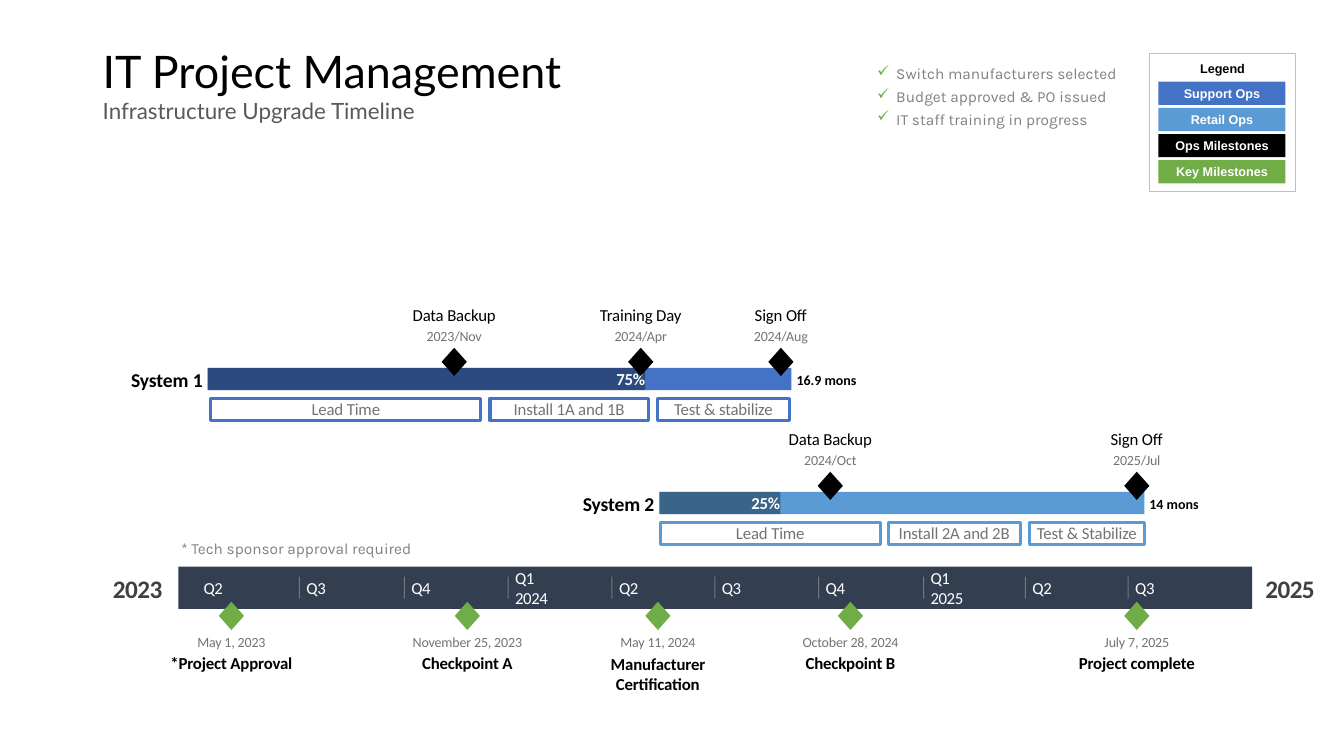
import dataclasses
import itertools
import typing

import pptx
import pptx.dml.color
import pptx.enum.shapes
import pptx.enum.text
import pptx.oxml
import pptx.oxml.ns
import pptx.util

PX = 9144
SHAPE = pptx.enum.shapes.MSO_SHAPE
ALIGN = pptx.enum.text.PP_ALIGN
ANCHOR = pptx.enum.text.MSO_ANCHOR
Box = tuple[float, float, float, float]
COLORS = {
    "white": "FFFFFF", "black": "000000", "support": "4472C4", "retail": "5B9BD5",
    "key": "70AD47", "band": "333F50", "year": "404040", "muted": "737373",
    "note": "808080", "subtitle": "595959", "border": "BFBFBF",
}
DAY_WIDTH = 1.1245
TIMELINE_START = 195
QUARTER_DAYS = [91, 92, 92, 91, 91, 92, 92, 90, 91]


@dataclasses.dataclass(frozen=True)
class Style:
    size: float
    color: str
    name: str = "Calibri"
    bold: bool = False
    align: ALIGN = ALIGN.CENTER
    anchor: ANCHOR = ANCHOR.MIDDLE
    spacing: int = 0
    wrap: bool = False
    inset: tuple[int, int] = (0, 0)
    after: int = 0
    bullet: str = ""


@dataclasses.dataclass(frozen=True)
class Milestone:
    left: int
    title: str
    title_width: int
    date: str
    date_width: int
    title_height: int = 20


@dataclasses.dataclass(frozen=True)
class Stage:
    left: int
    width: int
    title: str


@dataclasses.dataclass(frozen=True)
class System:
    title: str
    left: int
    top: int
    width: int
    color: str
    done: float
    duration: str
    stages: list[Stage]
    milestones: list[Milestone]


YEAR = Style(18, "year", bold=True, spacing=-40)
QUARTER = Style(12, "white", align=ALIGN.LEFT, spacing=-30, wrap=True)
PERCENT = Style(12, "white", bold=True, spacing=-20)
SYSTEM = Style(14, "black", bold=True, align=ALIGN.RIGHT, spacing=-10)
DURATION = Style(10, "black", bold=True, align=ALIGN.LEFT, wrap=True)
STAGE = Style(12, "muted", spacing=-10)
OPS = Style(12, "black", spacing=-10)
KEY = Style(12, "black", bold=True, spacing=-10, wrap=True)
DATE = Style(10, "muted", spacing=-10)
TITLE = Style(32, "black", "Lato", align=ALIGN.LEFT, anchor=ANCHOR.TOP, wrap=True, inset=(10, 5))
SUBTITLE = dataclasses.replace(TITLE, size=16, color="subtitle")
NOTE = dataclasses.replace(TITLE, size=11, color="note", name="Karla", after=3)
CHECK = dataclasses.replace(NOTE, bullet="✓")
LEGEND = Style(9, "white", "Arial", bold=True, inset=(10, 5))
LEGEND_TITLE = dataclasses.replace(LEGEND, color="black", anchor=ANCHOR.TOP)

SYSTEMS = [
    System("System 1", 206, 365, 579, "support", 0.75, "16.9 mons",
           [Stage(209, 268, "Lead Time"), Stage(486, 157, "Install 1A and 1B"),
            Stage(652, 131, "Test & stabilize")],
           [Milestone(438, "Data Backup", 85, "2023/Nov", 56),
            Milestone(623, "Training Day", 83, "2024/Apr", 54),
            Milestone(762, "Sign Off", 53, "2024/Aug", 56)]),
    System("System 2", 654, 488, 481, "retail", 0.25, "14 mons",
           [Stage(655, 218, "Lead Time"), Stage(881, 131, "Install 2A and 2B"),
            Stage(1021, 114, "Test & Stabilize")],
           [Milestone(811, "Data Backup", 85, "2024/Oct", 56),
            Milestone(1115, "Sign Off", 54, "2025/Jul", 49)]),
]
KEY_MILESTONES = [
    Milestone(217, "*Project Approval", 124, "May 1, 2023", 71),
    Milestone(451, "Checkpoint A", 92, "November 25, 2023", 112),
    Milestone(640, "Manufacturer Certification", 100, "May 11, 2024", 78, 41),
    Milestone(831, "Checkpoint B", 92, "October 28, 2024", 99),
    Milestone(1115, "Project complete", 118, "July 7, 2025", 67),
]
LEGEND_ROWS = [("Support Ops", "support"), ("Retail Ops", "retail"),
               ("Ops Milestones", "black"), ("Key Milestones", "key")]


def rgb(color: str) -> pptx.dml.color.RGBColor:
    return pptx.dml.color.RGBColor.from_string(COLORS[color])


def emu(values: typing.Iterable[float]) -> list[int]:
    return [round(value * PX) for value in values]


def set_all(target: typing.Any, values: dict[str, typing.Any]) -> None:
    for name, value in values.items():
        setattr(target, name, value)


def add_xml(parent: typing.Any, tag: str, **values: str) -> typing.Any:
    child = parent.makeelement(pptx.oxml.ns.qn(tag), values)
    parent.append(child)
    return child


def set_alpha(fill: typing.Any, percent: int) -> None:
    color = fill.find(".//" + pptx.oxml.ns.qn("a:srgbClr"))
    add_xml(color, "a:alpha", val=str(percent * 1000))


def write(shape: typing.Any, lines: list[tuple[str, Style]]) -> None:
    frame, first = shape.text_frame, lines[0][1]
    side, end = emu(first.inset)
    set_all(frame, {"margin_left": side, "margin_right": side, "margin_top": end,
                    "margin_bottom": end, "word_wrap": first.wrap,
                    "vertical_anchor": first.anchor})
    for index, (words, style) in enumerate(lines):
        para = frame.add_paragraph() if index else frame.paragraphs[0]
        para.text = words
        set_all(para, {"alignment": style.align, "space_after": pptx.util.Pt(style.after)})
        for span in para.runs:
            set_all(span.font, {"size": pptx.util.Pt(style.size), "name": style.name,
                                "bold": style.bold})
            span.font.color.rgb = rgb(style.color)
            if style.spacing:
                span.font._element.set("spc", str(style.spacing))
        if style.bullet:
            layout = para._p.get_or_add_pPr()
            layout.set("marL", str(19 * PX))
            layout.set("indent", str(-19 * PX))
            add_xml(add_xml(layout, "a:buClr"), "a:srgbClr", val=COLORS["key"])
            add_xml(layout, "a:buChar", char=style.bullet)


def add_text(shapes: typing.Any, box: Box, *lines: tuple[str, Style]) -> None:
    write(shapes.add_textbox(*emu(box)), list(lines))


def add_block(shapes: typing.Any, box: Box, fill: str = "", line: str = "",
              weight: float = 2.25, kind: SHAPE = SHAPE.RECTANGLE) -> typing.Any:
    shape = shapes.add_shape(kind, *emu(box))
    shape.shadow.inherit = False
    if fill:
        shape.fill.solid()
        shape.fill.fore_color.rgb = rgb(fill)
    else:
        shape.fill.background()
    if line:
        shape.line.color.rgb = rgb(line)
        shape.line.width = pptx.util.Pt(weight)
    else:
        shape.line.fill.background()
    return shape


def add_milestone(shapes: typing.Any, item: Milestone, tops: tuple[int, int, int],
                  color: str, style: Style) -> None:
    diamond, title, date = tops
    center = item.left + 12.5
    add_block(shapes, (item.left, diamond, 25, 28), color, kind=SHAPE.DIAMOND)
    add_text(shapes, (center - item.title_width / 2, title, item.title_width,
                      item.title_height), (item.title, style))
    add_text(shapes, (center - item.date_width / 2, date, item.date_width, 17),
             (item.date, DATE))


def add_system(shapes: typing.Any, item: System) -> None:
    left, top, done = item.left, item.top, round(item.width * item.done)
    add_block(shapes, (left, top, item.width, 22), item.color)
    progress = add_block(shapes, (left, top, done, 22), "black")
    set_alpha(progress._element.spPr, 35)
    for stage in item.stages:
        block = add_block(shapes, (stage.left, top + 30, stage.width, 22), "white", item.color)
        write(block, [(stage.title, STAGE)])
    add_text(shapes, (left - 77, top, 72, 24), (item.title, SYSTEM))
    add_text(shapes, (left + done - 29, top + 1, 29, 20), (f"{item.done:.0%}", PERCENT))
    add_text(shapes, (left + item.width + 5, top + 3, 61, 17), (item.duration, DURATION))
    for milestone in item.milestones:
        add_milestone(shapes, milestone, (top - 20, top - 63, top - 40), "black", OPS)


def add_timeline(shapes: typing.Any) -> None:
    for left, year in [(112, "2023"), (1255, "2025")]:
        add_text(shapes, (left, 568, 49, 31), (year, YEAR))
    add_block(shapes, (177, 562, 1065, 42), "band")
    for index, days in enumerate(itertools.accumulate(QUARTER_DAYS, initial=0)):
        tick = round(TIMELINE_START + days * DAY_WIDTH)
        years, quarter = divmod(index + 1, 4)
        label = f"Q{quarter + 1}" if quarter else f"Q1\n{2023 + years}"
        add_text(shapes, (tick + 7, 563, 40, 41), (label, QUARTER))
        if index:
            divider = shapes.add_connector(pptx.enum.shapes.MSO_CONNECTOR.STRAIGHT,
                                           *emu((tick, 572, tick, 594)))
            divider.line.color.rgb = rgb("white")
            divider.line.width = pptx.util.Pt(0.75)
            set_alpha(divider._element.spPr, 30)
            add_xml(divider._element.spPr, "a:effectLst")


def add_legend(shapes: typing.Any) -> None:
    legend = shapes.add_group_shape().shapes
    add_block(legend, (1140, 53, 145, 137), line="border", weight=0.5)
    add_text(legend, (1180, 55, 65, 25), ("Legend", LEGEND_TITLE))
    for row, (words, color) in enumerate(LEGEND_ROWS):
        entry = add_block(legend, (1149, 81 + 26 * row, 126, 23), color,
                          kind=SHAPE.ROUNDED_RECTANGLE)
        entry.adjustments[0] = 0
        write(entry, [(words, LEGEND)])


def main() -> None:
    deck = pptx.Presentation()
    set_all(deck, {"slide_width": 1333 * PX, "slide_height": 750 * PX})
    page = deck.slides.add_slide(deck.slide_layouts[6])
    shapes = page.shapes
    add_timeline(shapes)
    for system in SYSTEMS:
        add_system(shapes, system)
    for milestone in KEY_MILESTONES:
        add_milestone(shapes, milestone, (597, 648, 628), "key", KEY)
    add_text(shapes, (92, 38, 792, 91), ("IT Project Management", TITLE),
             ("Infrastructure Upgrade Timeline", SUBTITLE))
    add_legend(shapes)
    add_text(shapes, (170, 530, 344, 29), ("* Tech sponsor approval required", NOTE))
    add_text(shapes, (860, 59, 269, 74), ("Switch manufacturers selected", CHECK),
             ("Budget approved & PO issued", CHECK), ("IT staff training in progress", CHECK))
    deck.save("out.pptx")


if __name__ == "__main__":
    main()
